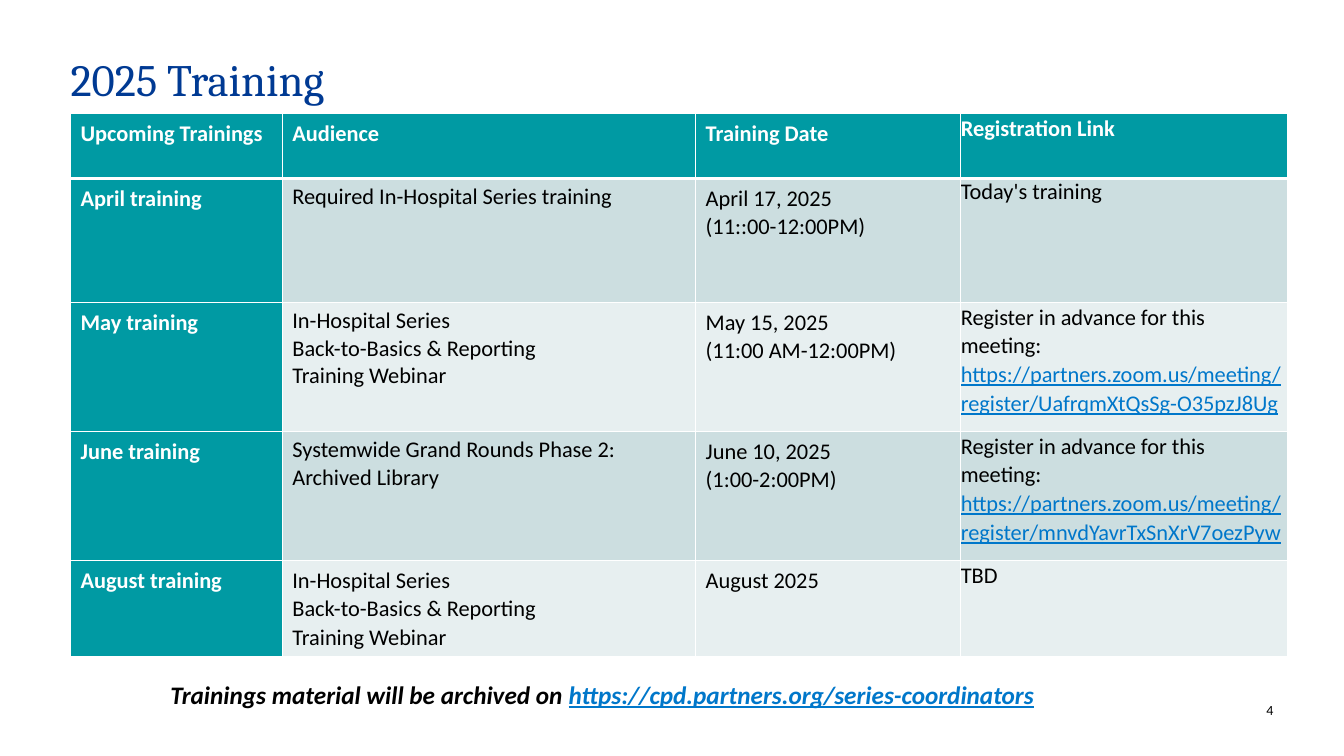
from lxml.etree import SubElement
from pptx import Presentation
from pptx.dml.color import RGBColor
from pptx.enum.text import MSO_AUTO_SIZE as AutoSize, PP_ALIGN as Align
from pptx.oxml.ns import qn
from pptx.util import Inches, Pt

WHITE = RGBColor(0xFF, 0xFF, 0xFF)
BLACK = RGBColor(0, 0, 0)
NAVY = RGBColor(0x00, 0x3A, 0x93)
TEAL = RGBColor(0x00, 0x9A, 0xA3)
BANDS = (RGBColor(0xCC, 0xDE, 0xE0), RGBColor(0xE7, 0xEF, 0xF0))
LINK = RGBColor(0x00, 0x77, 0xCA)

LEFT = 0.7
COLUMNS = (2.1, 4.1, 2.63, 3.24)
ROWS = (0.64, 1.23, 1.28, 1.28, 0.94)
SPACING = 1.05

REGISTER = "Register in advance for this meeting: "
MEETING = "https://partners.zoom.us/meeting/register/"
WEBINAR = ["In-Hospital Series\vBack-to-Basics & Reporting\vTraining Webinar"]
HEADER = ("Upcoming Trainings", "Audience", "Training Date", "Registration Link")
# Each training: name, audience, date lines, registration text, link
TRAININGS = (
    ("April training", ["Required In-Hospital Series training"],
     ["April 17, 2025", "(11::00-12:00PM)"], "Today's training", ""),
    ("May training", WEBINAR,
     ["May 15, 2025", "(11:00 AM-12:00PM)"],
     REGISTER, MEETING + "UafrqmXtQsSg-O35pzJ8Ug"),
    ("June training", ["Systemwide Grand Rounds Phase 2: Archived Library"],
     ["June 10, 2025", "(1:00-2:00PM)"],
     REGISTER, MEETING + "mnvdYavrTxSnXrV7oezPyw"),
    ("August training", WEBINAR, ["August 2025"], "TBD", ""),
)


def add_run(p, text, size, color=BLACK, face="Calibri", bold=False,
            italic=False, underline=False):
    """Add text as runs, with a line break at each vertical tab."""
    for i, line in enumerate(text.split("\v")):
        if i:
            p.add_line_break()
        r = p.add_run()
        r.text = line
        font = r.font
        font.name, font.size, font.color.rgb = face, Pt(size), color
        font.bold, font.italic, font.underline = bold, italic, underline


def add_text_box(slide, left, top, width, height, inset=0, wrap=True):
    """Add an empty text box and return its first paragraph."""
    sp = slide.shapes.add_textbox(*map(Inches, (left, top, width, height)))
    tf = sp.text_frame
    tf.word_wrap, tf.auto_size = wrap, AutoSize.NONE
    tf.margin_left = tf.margin_right = Inches(inset)
    tf.margin_top = tf.margin_bottom = Inches(inset / 2)
    return tf.paragraphs[0]


def style_cell(cell, fill, top=1, bottom=1):
    """Give a cell white borders, in points, and a solid fill."""
    tc_pr = cell._tc.get_or_add_tcPr()
    for side, width in zip("LRTB", (1, 1, top, bottom)):
        ln = SubElement(tc_pr, qn(f"a:ln{side}"), w=str(Pt(width)))
        solid = SubElement(ln, qn("a:solidFill"))
        SubElement(solid, qn("a:srgbClr"), val=str(WHITE))
    cell.fill.solid()
    cell.fill.fore_color.rgb = fill


def fill_cell(cell, lines, color=BLACK, bold=False, spacing=SPACING):
    """Write one paragraph per line and return the last one."""
    tf = cell.text_frame
    for i, line in enumerate(lines):
        p = tf.add_paragraph() if i else tf.paragraphs[0]
        p.line_spacing = spacing
        add_run(p, line, 16, color, bold=bold)
    return p


def remove_margins(cell):
    cell.margin_left = cell.margin_right = 0
    cell.margin_top = cell.margin_bottom = 0


def add_training_table(slide, top):
    frame = slide.shapes.add_table(
        len(ROWS), len(COLUMNS), Inches(LEFT), Inches(top),
        Inches(sum(COLUMNS)), Inches(sum(ROWS)))
    table = frame.table
    for column, width in zip(table.columns, COLUMNS):
        column.width = Inches(width)
    for i, height in enumerate(ROWS):
        table.rows[i].height = Inches(height)
        remove_margins(table.cell(i, len(COLUMNS) - 1))

    for cell, heading in zip(table.rows[0].cells, HEADER):
        style_cell(cell, TEAL, bottom=3)
        fill_cell(cell, [heading], WHITE, bold=True)

    for i, training in enumerate(TRAININGS):
        name, audience, date, registration, link = training
        cells = list(table.rows[i + 1].cells)
        for j, cell in enumerate(cells):
            style_cell(cell, BANDS[i % 2] if j else TEAL, top=1 if i else 3)
        last = i == len(TRAININGS) - 1
        fill_cell(cells[0], [name], WHITE, bold=True)
        fill_cell(cells[1], audience, spacing=SPACING if last else 1.0)
        fill_cell(cells[2], date)
        p = fill_cell(cells[3], [registration], spacing=SPACING if i else 1.0)
        if link:
            add_run(p, link, 16, LINK, underline=True)


def main():
    prs = Presentation()
    prs.slide_width, prs.slide_height = Inches(13.33), Inches(7.5)
    slide = prs.slides.add_slide(prs.slide_layouts[6])

    p = add_text_box(slide, 12.25, 6.96, 0.38, 0.17)
    p.alignment = Align.RIGHT
    add_run(p, "4", 10)

    p = add_text_box(slide, LEFT, 0.57, 11.92, 1.05)
    p.line_spacing = 0.9
    add_run(p, "2025 Training", 32, NAVY, "Cambria")

    p = add_text_box(slide, 1.59, 6.69, 8.99, 0.4, inset=0.1, wrap=False)
    add_run(p, "Trainings material will be archived on ", 18,
            bold=True, italic=True)
    add_run(p, "https://cpd.partners.org/series-coordinators", 18, LINK,
            bold=True, italic=True, underline=True)

    add_training_table(slide, 1.13)
    prs.save("out.pptx")


if __name__ == "__main__":
    main()
